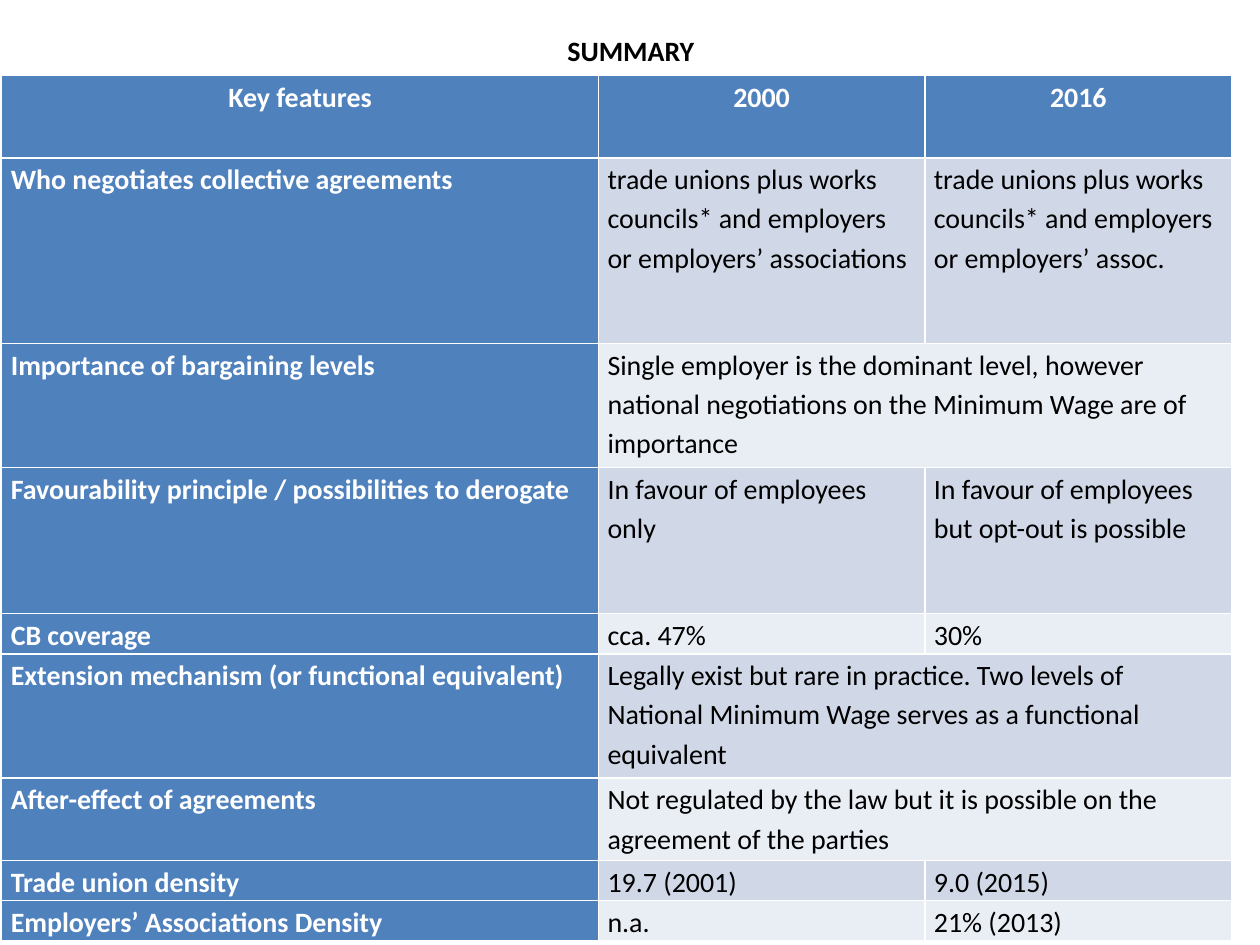
from pptx import Presentation
from pptx.dml.color import RGBColor
from pptx.enum.text import MSO_ANCHOR, PP_ALIGN
from pptx.util import Pt

CENTER, LEFT = PP_ALIGN.CENTER, PP_ALIGN.LEFT
MIDDLE = MSO_ANCHOR.MIDDLE
TITLE_ONLY = 5

# Content: a row with two entries spans both year columns
TITLE = "SUMMARY"
ROWS = [
    ("Key features", "2000", "2016"),
    ("Who negotiates collective agreements",
     "trade unions plus works councils* and employers or employers’ associations",
     "trade unions plus works councils* and employers or employers’ assoc."),
    ("Importance of bargaining levels",
     "Single employer is the dominant level, however national negotiations "
     "on the Minimum Wage are of importance"),
    ("Favourability principle / possibilities to derogate",
     "In favour of employees only",
     "In favour of employees but opt-out is possible"),
    ("CB coverage", "cca. 47%", "30%"),
    ("Extension mechanism (or functional equivalent)",
     "Legally exist but rare in practice. Two levels of National Minimum Wage "
     "serves as a functional equivalent"),
    ("After-effect of agreements",
     "Not regulated by the law but it is possible on the agreement of the parties"),
    ("Trade union density", "19.7 (2001)", "9.0 (2015)"),
    ("Employers’ Associations Density", "n.a.", "21% (2013)"),
]

# Layout in points
TITLE_BOX = (36.5, 15, 648, 28)
TABLE_LEFT, TABLE_TOP = 1, 43.2
COLUMN_WIDTHS = (341, 186.5, 175.5)
ROW_HEIGHTS = (47, 106, 71, 83.5, 23, 71, 47, 23, 23)

HEADING_FILL = "4F81BD"
BAND_FILLS = ("E9EDF4", "D0D8E8")
WHITE, BLACK = "FFFFFF", "000000"

CELL_FORMAT = {"margin_left": Pt(5.2), "margin_right": Pt(5.2),
               "margin_top": 0, "margin_bottom": 0}


def set_format(target, values):
    for name, value in values.items():
        setattr(target, name, value)


def color(target, hex_value):
    target.rgb = RGBColor.from_string(hex_value)


def write(paragraph, text, text_color, bold, alignment):
    paragraph.alignment = alignment
    run = paragraph.add_run()
    run.text = text
    set_format(run.font, {"name": "Calibri", "size": Pt(16), "bold": bold})
    color(run.font.color, text_color)


def fill_cell(cell, text, row, column):
    heading = row == 0 or column == 0
    set_format(cell, CELL_FORMAT)
    cell.fill.solid()
    color(cell.fill.fore_color, HEADING_FILL if heading else BAND_FILLS[row % 2])
    paragraph = cell.text_frame.paragraphs[0]
    paragraph.line_spacing = 1.15
    write(paragraph, text, WHITE if heading else BLACK, heading,
          CENTER if row == 0 else LEFT)


def add_title(slide):
    title = slide.shapes.title
    sides = ("left", "top", "width", "height")
    set_format(title, dict(zip(sides, map(Pt, TITLE_BOX))))
    set_format(title.text_frame, {"vertical_anchor": MIDDLE, "word_wrap": True})
    write(title.text_frame.paragraphs[0], TITLE, BLACK, True, CENTER)


def add_summary_table(slide):
    table = slide.shapes.add_table(
        len(ROWS), len(COLUMN_WIDTHS), Pt(TABLE_LEFT), Pt(TABLE_TOP),
        Pt(sum(COLUMN_WIDTHS)), Pt(sum(ROW_HEIGHTS))).table
    table.first_col = True
    for column, width in zip(table.columns, COLUMN_WIDTHS):
        column.width = Pt(width)
    for table_row, height in zip(table.rows, ROW_HEIGHTS):
        table_row.height = Pt(height)

    for row, texts in enumerate(ROWS):
        if len(texts) == 2:
            table.cell(row, 1).merge(table.cell(row, 2))
        for column, text in enumerate(texts):
            fill_cell(table.cell(row, column), text, row, column)


def main():
    presentation = Presentation()
    presentation.slide_width, presentation.slide_height = Pt(720), Pt(540)
    slide = presentation.slides.add_slide(presentation.slide_layouts[TITLE_ONLY])
    add_title(slide)
    add_summary_table(slide)
    presentation.save("out.pptx")


if __name__ == "__main__":
    main()
